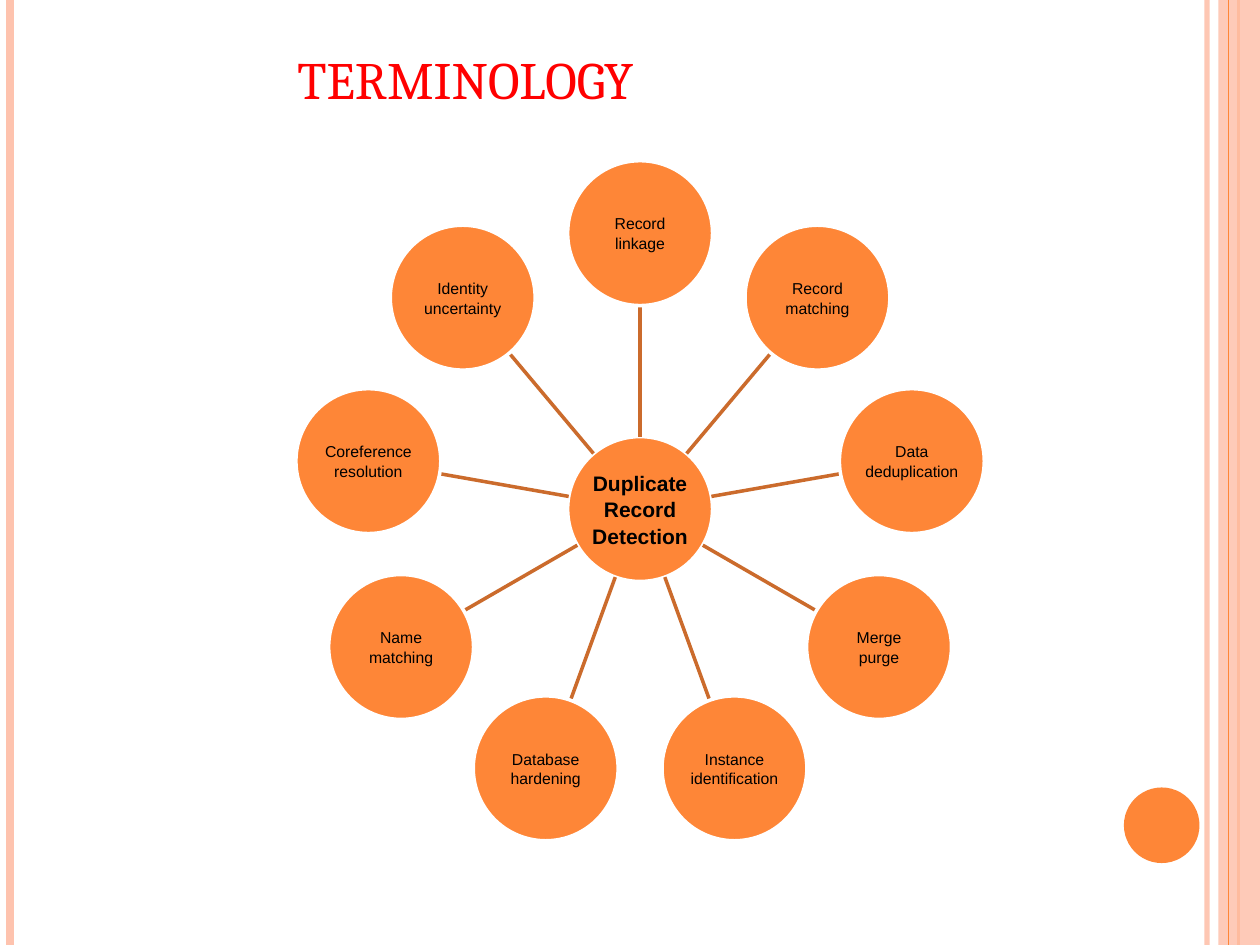
from dataclasses import dataclass
from math import cos, radians, sin

from lxml import etree
from pptx import Presentation
from pptx.dml.color import RGBColor
from pptx.enum.shapes import MSO_CONNECTOR, MSO_SHAPE
from pptx.enum.text import MSO_ANCHOR, PP_ALIGN
from pptx.oxml.ns import qn
from pptx.util import Inches, Pt

STRAIGHT = MSO_CONNECTOR.STRAIGHT
OVAL, RECT = MSO_SHAPE.OVAL, MSO_SHAPE.RECTANGLE
MIDDLE, BOTTOM = MSO_ANCHOR.MIDDLE, MSO_ANCHOR.BOTTOM
CENTER = PP_ALIGN.CENTER


@dataclass(frozen=True)
class Theme:
    orange: str = "FE8637"
    peach: str = "FEC3AE"
    spoke: str = "CB6B2C"
    title: str = "FF0000"
    text: str = "000000"
    white: str = "FFFFFF"
    title_font: str = "Cambria"
    body_font: str = "Arial"
    title_size: int = 30
    hub_size: int = 12
    node_size: int = 9


THEME = Theme()

SLIDE_W, SLIDE_H = 10, 7.5
HUB_X, HUB_Y = 5.08, 4.04
NODE_SIZE = 1.15
ORBIT = 2.19
SPOKE_LENGTH = 1.04

HUB = "Duplicate\nRecord\nDetection"
TERMS = [
    "Record\nlinkage", "Record\nmatching", "Data\ndeduplication",
    "Merge\npurge", "Instance\nidentification", "Database\nhardening",
    "Name\nmatching", "Coreference\nresolution", "Identity\nuncertainty",
]


def rgb(color):
    return RGBColor.from_string(color)


def set_opacity(fill, percent):
    color = fill._xPr.find(f"{qn('a:solidFill')}/{qn('a:srgbClr')}")
    etree.SubElement(color, qn("a:alpha")).set("val", str(percent * 1000))


def add_line(s, start, end, color, width, opacity=100):
    line = s.shapes.add_connector(STRAIGHT, *map(Inches, start + end))
    line.line.color.rgb = rgb(color)
    line.line.width = Pt(width)
    if opacity < 100:
        set_opacity(line.line.fill, opacity)
    etree.SubElement(line._element.spPr, qn("a:effectLst"))


def add_solid(s, kind, box, color, opacity=100):
    sp = s.shapes.add_shape(kind, *map(Inches, box))
    sp.shadow.inherit = False
    sp.fill.solid()
    sp.fill.fore_color.rgb = rgb(color)
    if opacity < 100:
        set_opacity(sp.fill, opacity)
    sp.line.fill.background()
    return sp


def format_text(tf, font, size, color, bold=False):
    for p in tf.paragraphs:
        for r in p.runs:
            r.font.name = font
            r.font.size = Pt(size)
            r.font.bold = bold
            r.font.color.rgb = rgb(color)


def add_node(s, x, y, text, size, bold=False):
    """Add a labelled circle centred on x, y."""
    half = NODE_SIZE / 2
    sp = add_solid(s, OVAL, (x - half, y - half, NODE_SIZE, NODE_SIZE), THEME.orange)
    sp.line.color.rgb = rgb(THEME.white)
    sp.line.width = Pt(2)
    tf = sp.text_frame
    tf.word_wrap = True
    tf.vertical_anchor = MIDDLE
    tf.margin_left = tf.margin_right = tf.margin_top = tf.margin_bottom = Inches(0.01)
    tf.text = text
    for p in tf.paragraphs:
        p.alignment = CENTER
        p.line_spacing = 1.04
    format_text(tf, THEME.body_font, size, THEME.text, bold)


def add_frame(s):
    """Add the stripes at both edges and the corner dot."""
    def stripe(x, color, width, opacity=100):
        add_line(s, (x, 0), (x, SLIDE_H), color, width, opacity)

    stripe(9.58, THEME.peach, 3, 93)
    stripe(0.08, THEME.peach, 4.5)
    stripe(9.83, THEME.orange, 1.5)
    add_solid(s, RECT, (9.67, 0, 0.33, SLIDE_H), THEME.peach, 87)
    stripe(9.75, THEME.orange, 0.75)
    add_solid(s, OVAL, (8.92, 6.25, 0.6, 0.6), THEME.orange)


def add_title(s, text):
    tf = s.shapes.add_textbox(*map(Inches, (0.58, 0.17, 9, 0.75))).text_frame
    tf.word_wrap = True
    tf.vertical_anchor = BOTTOM
    tf.margin_left = Inches(1.78)
    tf.text = text
    format_text(tf, THEME.title_font, THEME.title_size, THEME.title)


def add_radial_diagram(s):
    add_node(s, HUB_X, HUB_Y, HUB, THEME.hub_size, bold=True)
    for i, term in enumerate(TERMS):
        angle = radians(360 * i / len(TERMS) - 90)

        def at(radius):
            return HUB_X + radius * cos(angle), HUB_Y + radius * sin(angle)

        inner = NODE_SIZE / 2
        add_line(s, at(inner), at(inner + SPOKE_LENGTH), THEME.spoke, 2)
        add_node(s, *at(ORBIT), term, THEME.node_size)


def main():
    prs = Presentation()
    prs.slide_width, prs.slide_height = Inches(SLIDE_W), Inches(SLIDE_H)
    s = prs.slides.add_slide(prs.slide_layouts[6])
    add_frame(s)
    add_title(s, "TERMINOLOGY")
    add_radial_diagram(s)
    prs.save("out.pptx")


if __name__ == "__main__":
    main()
